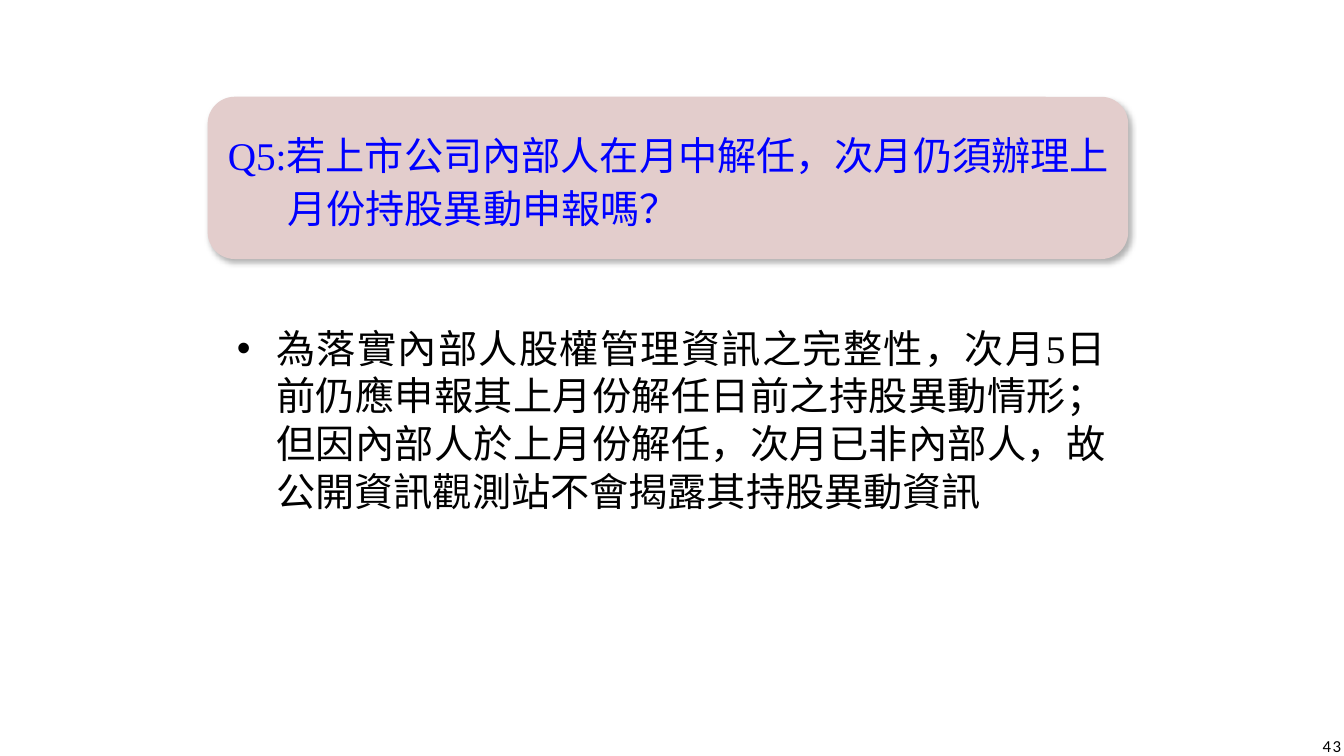
from dataclasses import dataclass

from lxml import etree
from pptx import Presentation
from pptx.dml.color import RGBColor
from pptx.enum.shapes import MSO_SHAPE as Shape
from pptx.enum.text import MSO_ANCHOR as Anchor, MSO_AUTO_SIZE as AutoSize, PP_ALIGN as Align
from pptx.oxml import parse_xml
from pptx.oxml.ns import nsdecls, qn
from pptx.util import Inches, Pt


@dataclass(frozen=True)
class Theme:
    card: RGBColor = RGBColor(0xE3, 0xCD, 0xCC)
    question: RGBColor = RGBColor(0x00, 0x00, 0xFF)
    ink: RGBColor = RGBColor(0x00, 0x00, 0x00)
    text_font: str = "Times New Roman"
    number_font: str = "Calibri"
    text_size: Pt = Pt(28)
    number_size: Pt = Pt(12)


theme = Theme()


def place(box, left, top, width, height, margins, anchor):
    """Position a box and set its inner margins (left, top, right, bottom)."""
    box.left, box.top = Inches(left), Inches(top)
    box.width, box.height = Inches(width), Inches(height)
    frame = box.text_frame
    frame.word_wrap = True
    frame.auto_size = AutoSize.NONE
    frame.vertical_anchor = anchor
    frame.margin_left, frame.margin_top, frame.margin_right, frame.margin_bottom = map(Inches, margins)


def write(box, text, align, font, size, color, hanging=0, bullet=None):
    """Fill a box with one paragraph, hanging by the given inches, and return it."""
    box.text_frame.text = text
    para = box.text_frame.paragraphs[0]
    properties = para._p.get_or_add_pPr()
    properties.set("marL", str(Inches(hanging)))
    properties.set("indent", str(-Inches(hanging)))
    if bullet:
        etree.SubElement(properties, qn("a:buFont")).set("typeface", "Arial")
        etree.SubElement(properties, qn("a:buChar")).set("char", bullet)
    para.alignment = align
    para.space_before = Pt(0)
    span = para.runs[0]
    span.font.name, span.font.size = font, size
    span.font.color.rgb = color
    return para


deck = Presentation()
deck.slide_width, deck.slide_height = Inches(13.33), Inches(7.5)
page = deck.slides.add_slide(deck.slide_layouts[1])
title, answer = page.shapes.title, page.placeholders[1]

# Rounded card behind the question
card = page.shapes.add_shape(Shape.ROUNDED_RECTANGLE, Inches(2.06), Inches(0.96), Inches(9.13), Inches(1.61))
card.fill.solid()
card.fill.fore_color.rgb = theme.card
card.line.fill.background()
card._element.spPr.append(parse_xml(
    f'<a:effectLst {nsdecls("a")}>'
    f'<a:outerShdw blurRad="{Pt(4.5)}" dist="{Pt(2.6)}" dir="{53 * 60000}" algn="ctr" rotWithShape="0">'
    f'<a:srgbClr val="{theme.ink}"><a:alpha val="30000"/></a:srgbClr>'
    '</a:outerShdw></a:effectLst>'))
title._element.addprevious(card._element)

# Question
place(title, 2.14, 1.04, 8.98, 1.45, (0.12, 0.12, 0.12, 0.12), Anchor.MIDDLE)
para = write(title, "Q5:若上市公司內部人在月中解任，次月仍須辦理上月份持股異動申報嗎？",
             Align.LEFT, theme.text_font, theme.text_size, theme.question, hanging=0.59)
para.line_spacing = Pt(38)
para.space_after = Pt(10)

# Answer
place(answer, 2.06, 3.17, 9.13, 2.53, (0.29, 0.04, 0.22, 0.04), Anchor.TOP)
para = write(answer, "為落實內部人股權管理資訊之完整性，次月5日前仍應申報其上月份解任日前之持股異動情形；"
             "但因內部人於上月份解任，次月已非內部人，故公開資訊觀測站不會揭露其持股異動資訊",
             Align.JUSTIFY, theme.text_font, theme.text_size, theme.ink, hanging=0.39, bullet="•")
para.level = 1
para.line_spacing = Pt(34)
para.space_after = Pt(6)

# Page number
number = page.shapes.add_textbox(0, 0, 0, 0)
place(number, 12.81, 7.2, 0.59, 0.4, (0.1, 0.05, 0.1, 0.05), Anchor.MIDDLE)
para = write(number, "43", Align.RIGHT, theme.number_font, theme.number_size, theme.ink)
para.runs[0].font._element.set("spc", "100")

deck.save("out.pptx")
